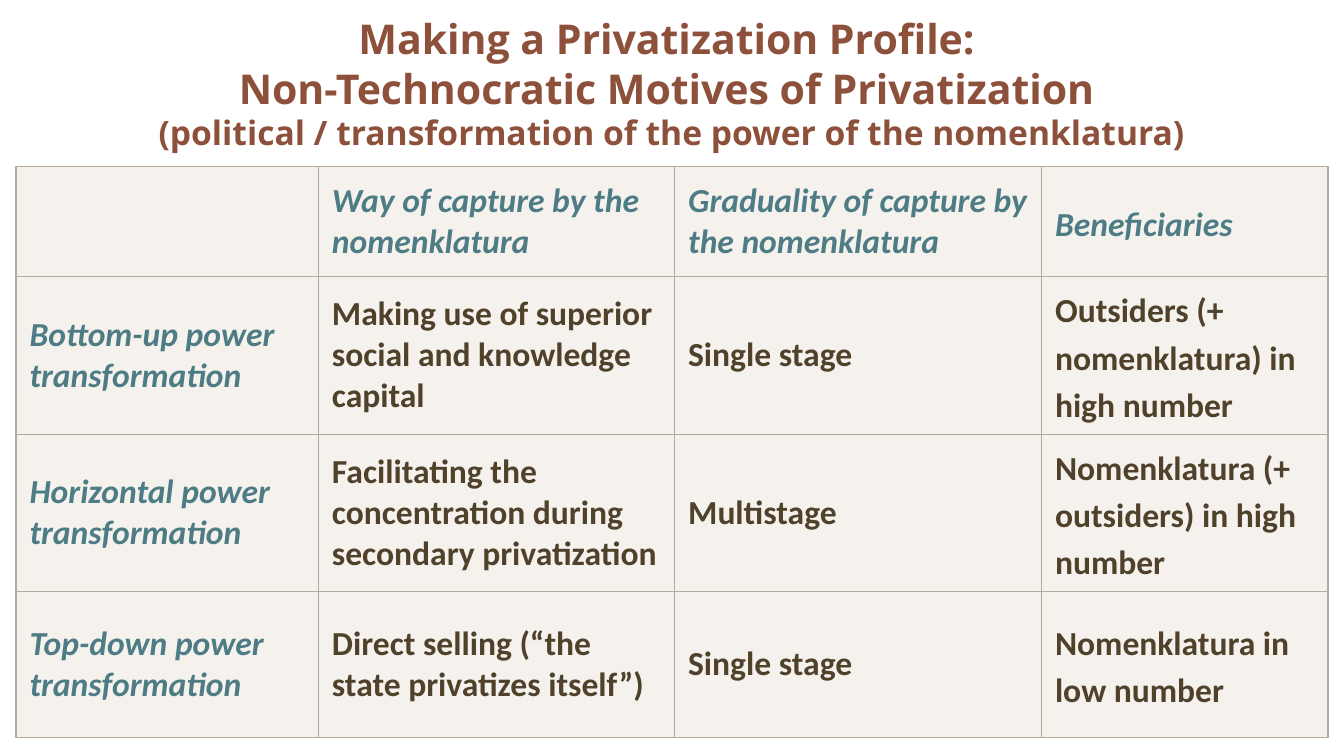
from lxml import etree
from pptx import Presentation, util as u
from pptx.dml.color import RGBColor
from pptx.enum import text
from pptx.oxml.ns import qn

COLORS = {
    "title": "8D503B",
    "heading": "4D7C85",
    "body": "50412B",
    "cell": "EFEAE4",
    "border": "B3A99D",
}
TITLE_LINES = [
    ("Making a Privatization Profile: ", 22),
    ("Non-Technocratic Motives of Privatization ", 22),
    ("(political / transformation of the power of the nomenklatura)", 18),
]
PROFILE = [
    ["", "Way of capture by the nomenklatura",
     "Graduality of capture by the nomenklatura", "Beneficiaries"],
    ["Bottom-up power transformation",
     "Making use of superior social and knowledge capital",
     "Single stage", "Outsiders (+ nomenklatura) in high number"],
    ["Horizontal power transformation",
     "Facilitating the concentration during secondary privatization",
     "Multistage", "Nomenklatura (+ outsiders) in high number"],
    ["Top-down power transformation",
     "Direct selling (“the state privatizes itself”)",
     "Single stage", "Nomenklatura in low number"],
]
COLUMN_WIDTHS = [2.25, 2.65, 2.73, 2.13]
ROW_HEIGHTS = [0.82, 1.17, 1.17, 1.09]
SLIDE_WIDTH = 10
LEFT, WIDTH, TITLE_HEIGHT = 0.12, 9.76, 1.24


def style_run(run, size, font_name, color, italic=False):
    run.font.size = u.Pt(size)
    run.font.name = font_name
    run.font.bold = True
    run.font.italic = italic
    run.font.color.rgb = RGBColor.from_string(COLORS[color])


def add_title(slide):
    title = slide.shapes.add_textbox(
        u.Inches(LEFT), 0, u.Inches(WIDTH), u.Inches(TITLE_HEIGHT))
    frame = title.text_frame
    frame.word_wrap = True
    frame.vertical_anchor = text.MSO_ANCHOR.MIDDLE
    heading = frame.paragraphs[0]
    heading.text = "\v".join(line for line, size in TITLE_LINES)
    heading.alignment = text.PP_ALIGN.CENTER
    for run, (line, size) in zip(heading.runs, TITLE_LINES):
        style_run(run, size, "Open Sans", "title")


def fill_cell(cell):
    cell.fill.solid()
    cell.fill.fore_color.rgb = RGBColor.from_string(COLORS["cell"])
    color = cell._tc.tcPr.find(".//" + qn("a:srgbClr"))
    etree.SubElement(color, qn("a:alpha"), val="60000")


def add_borders(cell, outer_sides):
    for position, side in enumerate("LRTB"):
        width = u.Pt(1 if outer_sides[side] else 0.5)
        line = etree.Element(qn(f"a:ln{side}"), w=str(width))
        fill = etree.SubElement(line, qn("a:solidFill"))
        etree.SubElement(fill, qn("a:srgbClr"), val=COLORS["border"])
        cell._tc.tcPr.insert(position, line)


def write_cell(cell, wording, is_heading, is_beneficiary):
    cell.vertical_anchor = text.MSO_ANCHOR.MIDDLE
    cell.text_frame.text = wording
    paragraph = cell.text_frame.paragraphs[0]
    if is_beneficiary:
        paragraph.line_spacing = 1.15
    for run in paragraph.runs:
        style_run(run, 18, "Calibri",
                  "heading" if is_heading else "body", is_heading)


def add_profile_table(slide):
    last_row, last_column = len(ROW_HEIGHTS) - 1, len(COLUMN_WIDTHS) - 1
    table = slide.shapes.add_table(
        len(ROW_HEIGHTS), len(COLUMN_WIDTHS), u.Inches(LEFT),
        u.Inches(TITLE_HEIGHT), u.Inches(WIDTH),
        u.Inches(sum(ROW_HEIGHTS))).table
    for column, width in zip(table.columns, COLUMN_WIDTHS):
        column.width = u.Inches(width)
    for row, height in zip(table.rows, ROW_HEIGHTS):
        row.height = u.Inches(height)
    for r, wordings in enumerate(PROFILE):
        for c, wording in enumerate(wordings):
            cell = table.cell(r, c)
            write_cell(cell, wording, r == 0 or c == 0, c == last_column)
            fill_cell(cell)
            add_borders(cell, {"L": c == 0, "R": c == last_column,
                               "T": r == 0, "B": r == last_row})


def main():
    deck = Presentation()
    deck.slide_width = u.Inches(SLIDE_WIDTH)
    deck.slide_height = u.Inches(SLIDE_WIDTH * 9 / 16)
    slide = deck.slides.add_slide(deck.slide_layouts[6])
    add_title(slide)
    add_profile_table(slide)
    deck.save("out.pptx")


if __name__ == "__main__":
    main()
